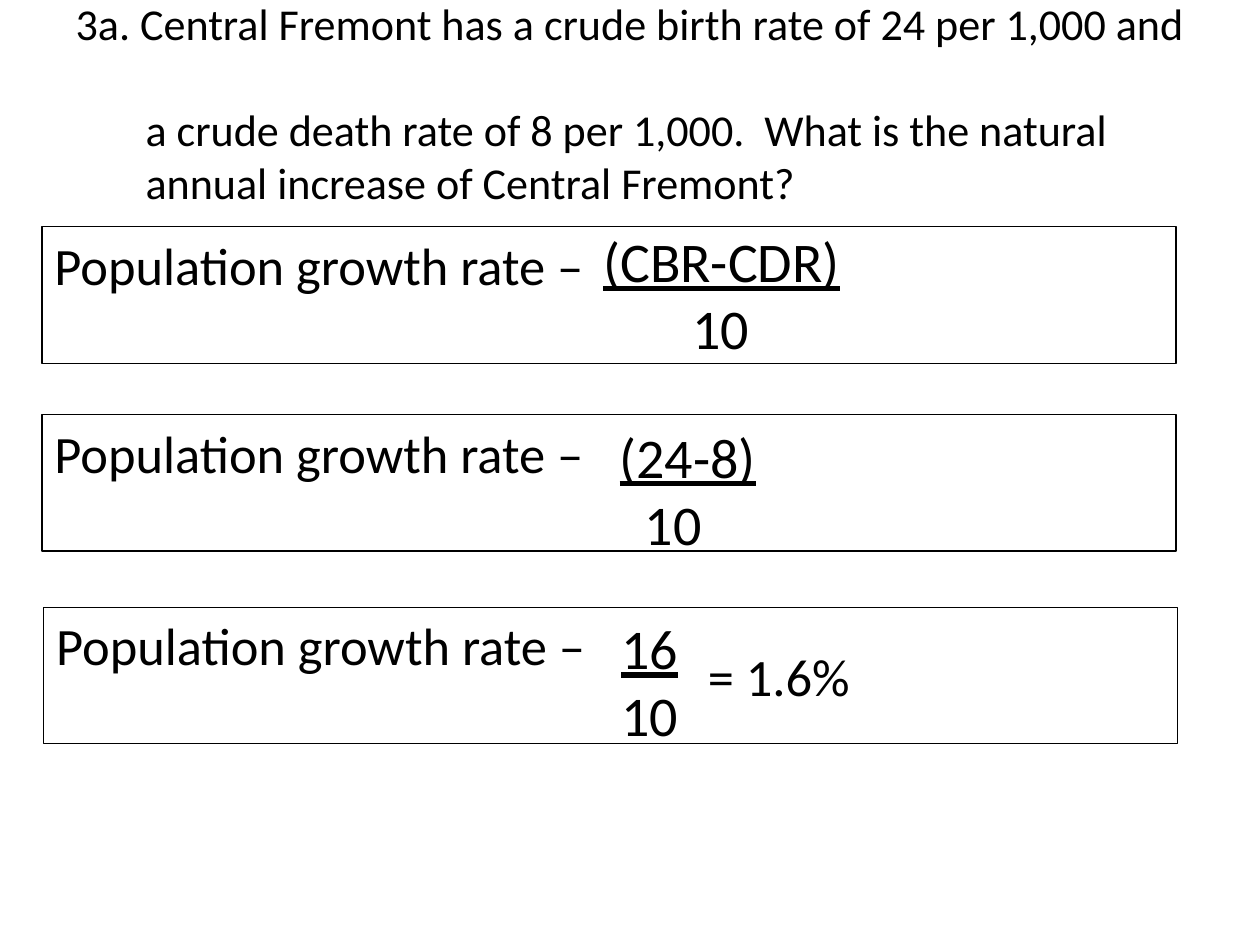
"""Build the population growth rate slide."""
from pptx import Presentation
from pptx.dml.color import RGBColor
from pptx.enum.shapes import MSO_SHAPE
from pptx.enum.text import MSO_ANCHOR, MSO_AUTO_SIZE, PP_ALIGN
from pptx.util import Pt

BLACK = RGBColor(0, 0, 0)
FONT = "Calibri"
TITLE = [
    "3a. Central Fremont has a crude birth rate of 24 per 1,000 and",
    "a crude death rate of 8 per 1,000.  What is the natural",
    "annual increase of Central Fremont?",
]
LABEL = "Population growth rate –"
# box left, box top, fraction left, top, width, numerator, denominator, indent
STEPS = [
    (24, 129.6, 337.7, 126, 180, "(CBR-CDR)", "10", 51),
    (24, 236.9, 347, 237.6, 103, "(24-8)", "10", 14.5),
    (25, 347, 347.8, 347, 103, "16", "10", 0),
]
RESULT = "= 1.6%"


def write(frame, lines, size):
    frame.text = "\n".join(lines)
    frame.word_wrap = True
    frame.auto_size = MSO_AUTO_SIZE.NONE
    for para in frame.paragraphs:
        para.alignment = PP_ALIGN.LEFT
        for run in para.runs:
            font = run.font
            font.name, font.size = FONT, Pt(size)
            font.color.rgb = BLACK


def indent(para, left):
    props = para._p.get_or_add_pPr()
    props.set("marL", str(Pt(left)))
    props.set("indent", "0")


def add_text(slide, place, lines, size):
    frame = slide.shapes.add_textbox(*map(Pt, place)).text_frame
    write(frame, lines, size)
    return frame.paragraphs


def add_title(slide):
    title = slide.shapes.title
    title.left, title.top, title.width, title.height = map(Pt, (36, 18, 648, 108))
    frame = title.text_frame
    write(frame, TITLE, 25.2)
    frame.vertical_anchor = MSO_ANCHOR.MIDDLE
    frame.margin_right = Pt(3.6)
    frame.margin_bottom = Pt(30.8)
    for para in frame.paragraphs[1:]:
        indent(para, 40)
    frame.paragraphs[1].space_before = Pt(30.5)


def add_step(slide, step):
    left, top, x, y, width, upper, lower, shift = step
    box = slide.shapes.add_shape(
        MSO_SHAPE.RECTANGLE, Pt(left), Pt(top), Pt(648), Pt(78)
    )
    box.shadow.inherit = False
    box.fill.background()
    box.line.color.rgb = BLACK
    box.line.width = Pt(0.75)
    write(box.text_frame, [LABEL], 30)
    box.text_frame.vertical_anchor = MSO_ANCHOR.TOP
    over, under = add_text(slide, (x, y, width, 85), [upper, lower], 32)
    over.runs[0].font.underline = True
    indent(under, shift)


def main():
    deck = Presentation()
    deck.slide_width, deck.slide_height = Pt(720), Pt(540)
    slide = deck.slides.add_slide(deck.slide_layouts[5])
    add_title(slide)
    for step in STEPS:
        add_step(slide, step)
    add_text(slide, (397.4, 364.3, 154, 44), [RESULT], 30)
    deck.save("out.pptx")


if __name__ == "__main__":
    main()
